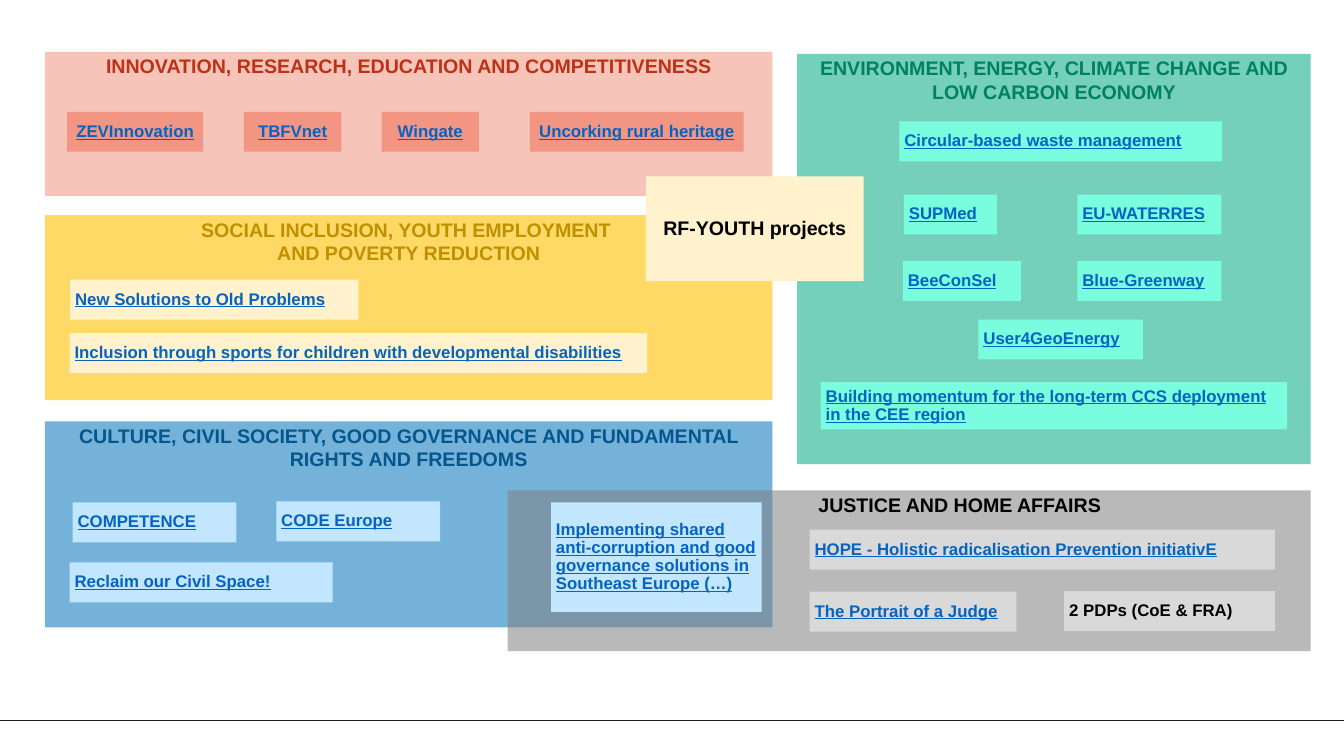
from typing import NamedTuple

from lxml import etree
from pptx import Presentation
from pptx.dml.color import RGBColor
from pptx.enum import shapes, text
from pptx.oxml.ns import qn
from pptx.util import Inches, Pt

INK, LINK, BLACK = "1D1E1C", "0563C1", "000000"
RED, SAND, BLUE, GREEN, GREY = "F29582", "FFF2CC", "C1E6FD", "7AFDDF", "D9D9D9"
LEFT, CENTER = text.PP_ALIGN.LEFT, text.PP_ALIGN.CENTER


class Panel(NamedTuple):
    title: str
    x: float
    y: float
    w: float
    h: float
    fill: str
    color: str
    opacity: int = 55
    inset: float = 0.1


class Tag(NamedTuple):
    label: str
    x: float
    y: float
    w: float
    fill: str
    h: float = 0.79
    align: text.PP_ALIGN = LEFT
    linked: bool = True
    size: int = 24


PANELS = [
    Panel("INNOVATION, RESEARCH, EDUCATION AND COMPETITIVENESS",
          0.89, 1.03, 14.43, 2.86, "F29582", "BD3114"),
    Panel("ENVIRONMENT, ENERGY, CLIMATE CHANGE AND LOW CARBON ECONOMY",
          15.81, 1.07, 10.19, 8.14, "02AB84", "018063"),
    Panel("SOCIAL INCLUSION, YOUTH EMPLOYMENT \vAND POVERTY REDUCTION",
          0.89, 4.27, 14.43, 3.67, "FFC000", "BF9000", opacity=60),
    Panel("CULTURE, CIVIL SOCIETY, GOOD GOVERNANCE AND FUNDAMENTAL RIGHTS AND FREEDOMS",
          0.89, 8.36, 14.43, 4.09, "0573BA", "04568C"),
    Panel("JUSTICE AND HOME AFFAIRS",
          10.07, 9.73, 15.93, 3.19, "808080", BLACK, inset=2.1),
]

TAGS = [
    # Justice and home affairs
    Tag("The Portrait of a Judge", 16.06, 11.74, 4.1, GREY),
    Tag("Implementing shared anti-corruption and good governance solutions in "
        "Southeast Europe (…)", 10.93, 9.97, 4.18, BLUE, h=2.17),
    Tag("HOPE - Holistic radicalisation Prevention initiativE", 16.06, 10.51, 9.23, GREY),
    Tag("2 PDPs (CoE & FRA)", 21.11, 11.73, 4.18, GREY, linked=False),
    # Shared heading
    Tag("RF-YOUTH projects", 12.81, 3.5, 4.32, SAND, h=2.08, align=CENTER,
        linked=False, size=28),
    # Social inclusion
    Tag("Inclusion through sports for children with developmental disabilities",
        1.38, 6.61, 11.46, SAND),
    Tag("New Solutions to Old Problems", 1.39, 5.55, 5.72, SAND),
    # Innovation
    Tag("ZEVInnovation", 1.33, 2.22, 2.7, RED, align=CENTER),
    Tag("TBFVnet", 4.84, 2.22, 1.93, RED, align=CENTER),
    Tag("Wingate", 7.57, 2.22, 1.93, RED, align=CENTER),
    Tag("Uncorking rural heritage", 10.51, 2.22, 4.24, RED, align=CENTER),
    # Culture
    Tag("Reclaim our Civil Space!", 1.38, 11.16, 5.22, BLUE),
    Tag("CODE Europe", 5.48, 9.95, 3.25, BLUE),
    Tag("COMPETENCE", 1.44, 9.97, 3.25, BLUE),
    # Environment
    Tag("Circular-based waste management", 17.84, 2.41, 6.4, GREEN),
    Tag("User4GeoEnergy", 19.41, 6.34, 3.26, GREEN),
    Tag("Building momentum for the long-term CCS deployment in the CEE region",
        16.28, 7.58, 9.25, GREEN, h=0.94),
    Tag("EU-WATERRES", 21.37, 3.86, 2.86, GREEN),
    Tag("BeeConSel", 17.91, 5.18, 2.34, GREEN),
    Tag("Blue-Greenway", 21.37, 5.18, 2.86, GREEN),
    Tag("SUPMed", 17.93, 3.86, 1.85, GREEN),
]


def rgb(color: str) -> RGBColor:
    return RGBColor.from_string(color)


def add_box(s, box: Panel | Tag):
    sp = s.shapes.add_shape(shapes.MSO_SHAPE.RECTANGLE, Inches(box.x),
                            Inches(box.y), Inches(box.w), Inches(box.h))
    sp.shadow.inherit = False
    sp.fill.solid()
    sp.fill.fore_color.rgb = rgb(box.fill)
    sp.line.fill.background()
    return sp


def write(sp, label: str, size: int, color: str, align: text.PP_ALIGN,
          anchor: text.MSO_ANCHOR, underline: bool = False):
    tf = sp.text_frame
    tf.word_wrap = True
    tf.vertical_anchor = anchor
    p = tf.paragraphs[0]
    p.text = label
    p.alignment = align
    for r in p.runs:
        r.font.name, r.font.size, r.font.bold = "Arial", Pt(size), True
        r.font.color.rgb = rgb(color)
        if underline:
            r.font.underline = True
    return p


def add_panel(s, panel: Panel) -> None:
    sp = add_box(s, panel)
    color = sp._element.spPr.find(qn("a:solidFill"))[0]
    etree.SubElement(color, qn("a:alpha")).set("val", str(panel.opacity * 1000))
    write(sp, panel.title, 28, panel.color, CENTER, text.MSO_ANCHOR.TOP)
    sp.text_frame.margin_left = Inches(panel.inset)


def add_tag(s, tag: Tag) -> None:
    sp = add_box(s, tag)
    p = write(sp, tag.label, tag.size, LINK if tag.linked else BLACK,
              tag.align, text.MSO_ANCHOR.MIDDLE, tag.linked)
    p.line_spacing = 0.9


def add_footer_line(s) -> None:
    y = Inches(14.29)
    line = s.shapes.add_connector(shapes.MSO_CONNECTOR.STRAIGHT,
                                  Inches(0.01), y, Inches(26.65), y)
    line.line.color.rgb = rgb(INK)
    line.line.width = Pt(1.5)
    etree.SubElement(line._element.spPr, qn("a:effectLst"))


def main() -> None:
    prs = Presentation()
    prs.slide_width, prs.slide_height = Inches(26.66), Inches(15)
    s = prs.slides.add_slide(prs.slide_layouts[6])
    add_footer_line(s)
    for panel in PANELS:
        add_panel(s, panel)
    for tag in TAGS:
        add_tag(s, tag)
    prs.save("out.pptx")


if __name__ == "__main__":
    main()
